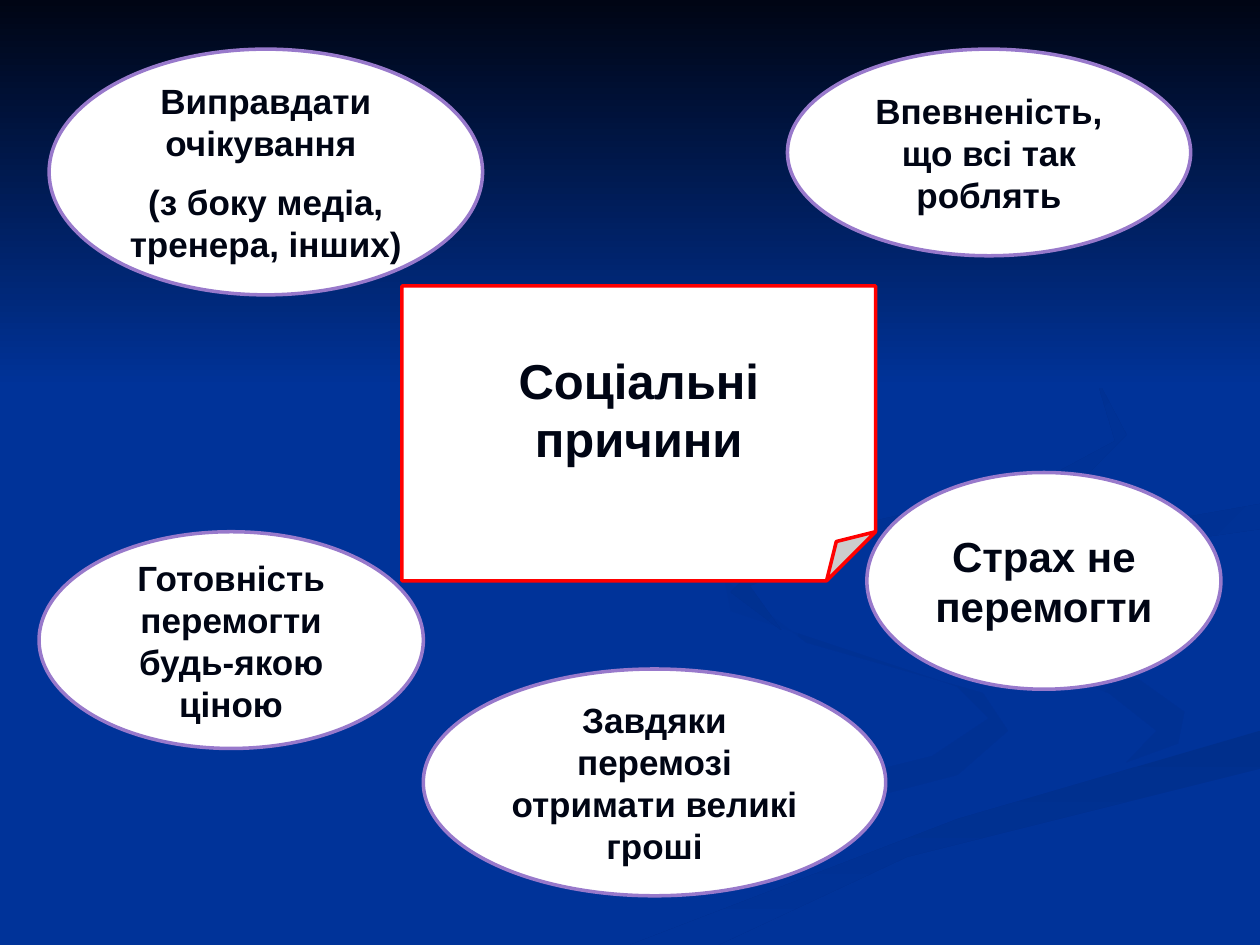
"""Build a slide showing the social reasons around a central note."""
from pptx import Presentation
from pptx.dml.color import RGBColor
from pptx.enum.shapes import MSO_SHAPE
from pptx.enum.text import MSO_ANCHOR, PP_ALIGN
from pptx.util import Inches, Pt

COLORS = {
    "background": "003399", "night": "000514", "paper": "FFFFFF",
    "note_line": "FF0000", "bubble_line": "9879CB",
    "swirl": "003193", "ribbon": "002F8C",
}


def color(name):
    return RGBColor.from_string(COLORS[name])


def fill_gradient(shape, start, end, angle):
    shape.shadow.inherit = False
    shape.line.fill.background()
    shape.fill.gradient()
    shape.fill.gradient_angle = (360 - angle) % 360
    for stop, name in zip(shape.fill.gradient_stops, (start, end)):
        stop.color.rgb = color(name)


deck = Presentation()
deck.slide_width, deck.slide_height = Inches(10), Inches(7.5)
page = deck.slides.add_slide(deck.slide_layouts[6])
page.background.fill.solid()
page.background.fill.fore_color.rgb = color("background")

swirls = [
    ("background", "swirl", 0, [
        (7.8, 5.5), (6.4, 5.1), (5.75, 4.6), (5.8, 4.85), (7.6, 5.45),
        (7.85, 5.7), (7.4, 6), (5.4, 6.5), (3, 7.5), (3.6, 7.5),
        (5.3, 6.75), (7.6, 6.15), (8, 5.8)]),
    ("background", "swirl", 45, [
        (9.4, 5.65), (9.05, 5.4), (7.6, 5), (7.24, 4.64), (7.55, 5.05),
        (8.8, 5.5), (9.18, 5.8), (8.94, 6.05), (9.35, 5.9)]),
    ("ribbon", "background", 90, [
        (5, 7.5), (5.7, 7.5), (7.2, 6.8), (10, 6.1), (10, 5.8), (7.6, 6.5)]),
    ("ribbon", "background", 45, [
        (7.8, 4.6), (8.26, 4.96), (8.05, 4.7), (8.6, 4.4), (10, 4.2),
        (10, 4), (8.3, 4.3)]),
    ("ribbon", "background", 45, [
        (6.8, 4.3), (8.4, 4), (8.94, 3.45), (8.65, 2.9), (7.6, 2.3),
        (8.7, 3), (8.85, 3.5), (8.2, 3.85), (6.2, 4.3), (5.8, 4.7),
        (6.2, 5), (5.95, 4.65)]),
]
for start, end, angle, points in swirls:
    corners = [(Inches(x), Inches(y)) for x, y in points]
    outline = page.shapes.build_freeform(*corners[0])
    outline.add_line_segments(corners[1:], close=True)
    fill_gradient(outline.convert_to_shape(), start, end, angle)

sky = page.shapes.add_shape(MSO_SHAPE.RECTANGLE, 0, 0, Inches(10), Inches(3.08))
fill_gradient(sky, "night", "background", 90)

note, bubble = (MSO_SHAPE.FOLDED_CORNER, "note_line"), (MSO_SHAPE.OVAL, "bubble_line")
reasons = [
    (note, (3.19, 2.27, 3.76, 2.34), 28, ["Соціальні причини"]),
    (bubble, (6.25, 0.39, 3.2, 1.64), 20, ["Впевненість, що всі так роблять"]),
    (bubble, (0.39, 0.39, 3.44, 1.95), 20,
     ["Виправдати очікування ", "(з боку медіа, тренера, інших)"]),
    (bubble, (6.88, 3.75, 2.81, 1.72), 24, ["Страх не перемогти"]),
    (bubble, (0.31, 4.22, 3.05, 1.72), 20, ["Готовність перемогти будь-якою ціною"]),
    (bubble, (3.36, 5.31, 3.67, 1.8), 20, ["Завдяки перемозі отримати великі гроші"]),
]
for (kind, line_color), place, size, texts in reasons:
    box = page.shapes.add_shape(kind, *map(Inches, place))
    box.shadow.inherit = False
    box.fill.solid()
    box.fill.fore_color.rgb = color("paper")
    box.line.color.rgb = color(line_color)
    box.line.width = Pt(2)
    frame = box.text_frame
    frame.word_wrap = True
    frame.vertical_anchor = MSO_ANCHOR.MIDDLE
    frame.text = "\n".join(texts)
    for para in frame.paragraphs:
        para.alignment = PP_ALIGN.CENTER
        para.space_before = Pt(size / 2)
        span = para.runs[0]
        for name, value in {"name": "Arial", "size": Pt(size), "bold": True}.items():
            setattr(span.font, name, value)
        span.font.color.rgb = color("night")

deck.save("out.pptx")
